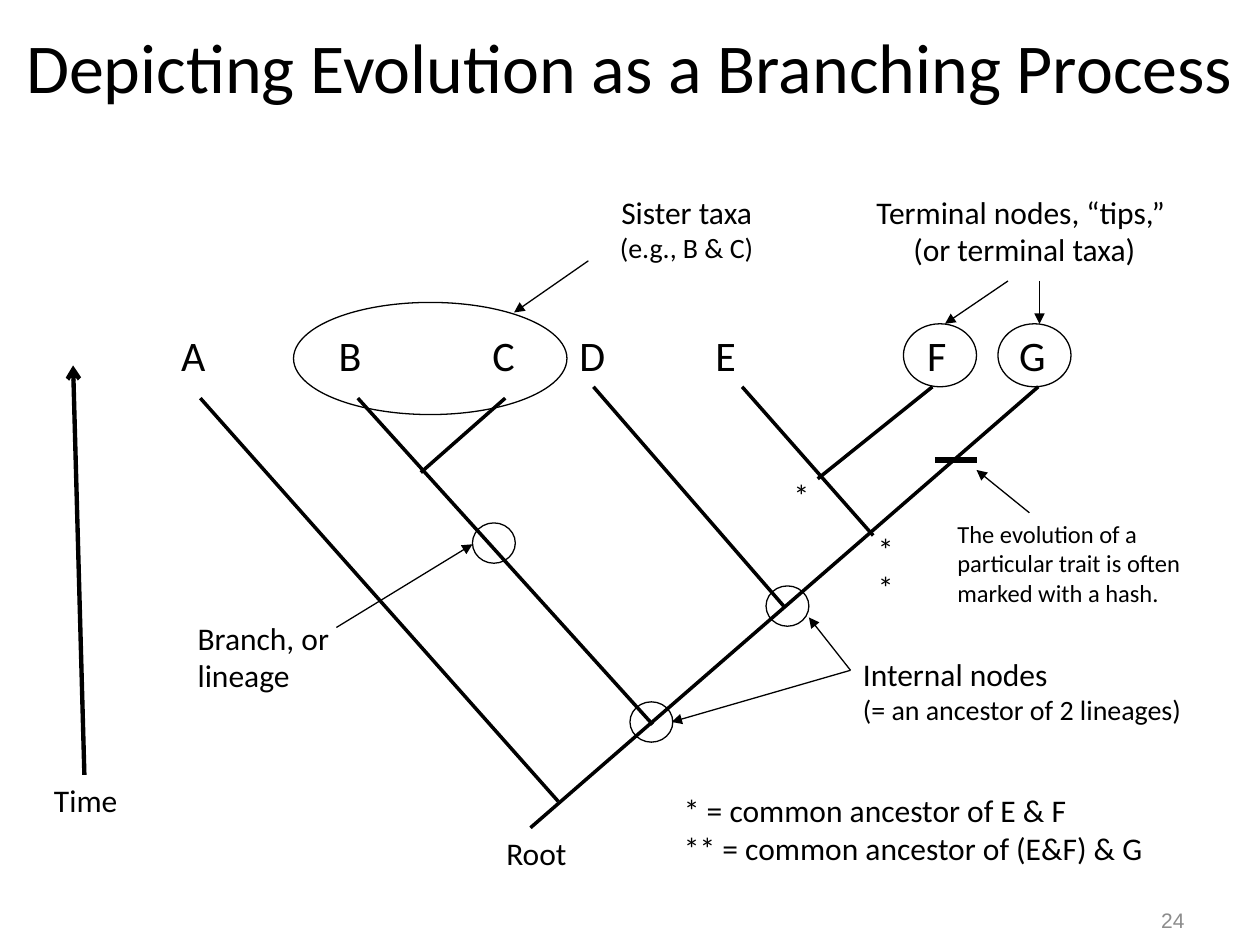
"""Builds a slide on depicting evolution as a branching process."""
from dataclasses import dataclass

from lxml import etree
from pptx import Presentation
from pptx import util as u
from pptx.dml.color import RGBColor
from pptx.enum import shapes, text
from pptx.oxml import ns

LEFT, CENTER, RIGHT = text.PP_ALIGN.LEFT, text.PP_ALIGN.CENTER, text.PP_ALIGN.RIGHT


@dataclass(frozen=True)
class Theme:
    """Colours, fonts, type sizes and line widths."""
    ink: str = "000000"
    muted: str = "8C8C8C"
    font: str = "Calibri"
    number_font: str = "Arial"
    title: int = 40
    taxon: int = 24
    label: int = 18
    detail: int = 16
    note: int = 14
    number: int = 12
    thin: float = 0.75
    branch: float = 2
    time: float = 2.5
    hash: float = 3.5


class Board:
    """Draws on one slide over a grid of 100 columns by 75 rows."""

    def __init__(self, prs, theme):
        """Adds a blank slide and derives the grid cell."""
        self.theme = theme
        self.s = prs.slides.add_slide(prs.slide_layouts[6])
        self.col, self.row = prs.slide_width / 100, prs.slide_height / 75

    def place(self, x, y, w, h):
        """Turns columns and rows into slide lengths."""
        return int(x * self.col), int(y * self.row), int(w * self.col), int(h * self.row)

    def ring(self, x, y, w, h):
        """Adds an unfilled ellipse."""
        sp = self.s.shapes.add_shape(shapes.MSO_SHAPE.OVAL, *self.place(x, y, w, h))
        sp.shadow.inherit = False
        sp.fill.background()
        sp.line.color.rgb = RGBColor.from_string(self.theme.ink)
        sp.line.width = u.Pt(self.theme.thin)

    def line(self, start, end, width, head=None):
        """Adds a straight line, with an arrowhead at its end if asked."""
        ends = self.place(*start, *end)
        sp = self.s.shapes.add_connector(shapes.MSO_CONNECTOR.STRAIGHT, *ends)
        sp.line.color.rgb = RGBColor.from_string(self.theme.ink)
        sp.line.width = u.Pt(width)
        if head:
            ln = sp._element.spPr.find(ns.qn("a:ln"))
            etree.SubElement(ln, ns.qn("a:tailEnd"), type=head)
        etree.SubElement(sp._element.spPr, ns.qn("a:effectLst"))

    def pointer(self, start, end):
        """Adds a thin arrow from a label to its target."""
        self.line(start, end, self.theme.thin, "triangle")

    def label(self, box, *lines, align=LEFT, wrap=False):
        """Adds a text box of (wording, size) lines that grows to fit."""
        sp = self.s.shapes.add_textbox(*self.place(*box))
        tf = sp.text_frame
        tf.word_wrap = wrap
        tf.auto_size = text.MSO_AUTO_SIZE.SHAPE_TO_FIT_TEXT
        tf.text = "\n".join(wording for wording, _ in lines)
        for p, (_, size) in zip(tf.paragraphs, lines):
            p.alignment = align
            font = p.runs[0].font
            font.name, font.size = self.theme.font, u.Pt(size)
            font.color.rgb = RGBColor.from_string(self.theme.ink)
        return tf

    def page_number(self, box, number):
        """Adds the muted page number."""
        tf = self.label(box, (number, self.theme.number), align=RIGHT, wrap=True)
        tf.auto_size = text.MSO_AUTO_SIZE.NONE
        tf.vertical_anchor = text.MSO_ANCHOR.MIDDLE
        font = tf.paragraphs[0].runs[0].font
        font.name = self.theme.number_font
        font.color.rgb = RGBColor.from_string(self.theme.muted)


def draw_tree(b):
    """Draws the taxa, branches and rings of the tree."""
    t = b.theme
    taxa = {"A": (13.4, 4.3), "B": (25.9, 4.3), "C": (38.1, 4.5), "D": (45, 4.5),
            "E": (55.8, 4.3), "F": (72.6, 4.1), "G": (79.9, 4.6)}
    branches = [((42.1, 65.7), (82.4, 30.7)), ((44.3, 63.6), (15.9, 31.6)),
                ((51.8, 57.5), (28.4, 31.6)), ((62.2, 48.1), (47.1, 30.7)),
                ((69.3, 42.5), (58.9, 30.7)), ((74, 30.7), (64.9, 38)),
                ((40.1, 31.6), (33.4, 37.5))]
    b.ring(23.3, 24, 21.7, 8.9)
    for x in (71.7, 79.2):
        b.ring(x, 25.7, 5.8, 5)
    for x, y in ((50, 55.7), (60.8, 46.5), (37.5, 41.5)):
        b.ring(x, y, 3.4, 3.2)
    for name, (x, w) in taxa.items():
        b.label((x, 25.7, w, 5), (name, t.taxon))
    for start, end in branches:
        b.line(start, end, t.branch)
    b.line((74.2, 36.5), (77.5, 36.5), t.hash)


def draw_labels(b):
    """Adds the wording around the tree and its pointers."""
    t = b.theme
    b.label((47.3, 14.8, 14.4, 6.7), ("Sister taxa", t.label),
            ("(e.g., B & C)", t.detail), align=CENTER)
    b.label((67.5, 14.8, 27.6, 7.1), ("Terminal nodes, “tips,” ", t.label),
            ("(or terminal taxa)", t.label), align=CENTER)
    b.label((67.5, 51.5, 30.8, 6.7), ("Internal nodes", t.label),
            ("(= an ancestor of 2 lineages)", t.detail), wrap=True)
    b.label((14.7, 48.6, 13.7, 7.1), ("Branch, or", t.label), ("lineage", t.label))
    b.label((75, 40.7, 21.7, 8.1),
            ("The evolution of a particular trait is often marked with a hash.", t.note),
            wrap=True)
    b.label((53.3, 62.3, 42.1, 7.1), ("* = common ancestor of E & F", t.label),
            ("** = common ancestor of (E&F) & G", t.label))
    b.label((62, 37.3, 3, 4), ("*", t.label))
    b.label((68.7, 41.6, 4, 4), ("**", t.label), wrap=True)
    b.label((39.2, 65.7, 7.3, 4), ("Root", t.label))
    b.label((3.3, 61.5, 7.1, 4), ("Time", t.label))
    b.line((6.7, 61.5), (5.8, 29), t.time, "arrow")
    for start, end in [((46.7, 20.7), (40.8, 24.8)), ((67.5, 53.2), (53.3, 57.3)),
                       ((67.5, 53.2), (64.2, 49)), ((26.7, 49.8), (37.5, 43.2)),
                       ((82.5, 22.3), (82.5, 25.7)), ((80, 22.3), (75, 25.7)),
                       ((81.7, 40.7), (77.5, 37.3))]:
        b.pointer(start, end)


def main():
    """Builds and saves the slide."""
    prs = Presentation()
    prs.slide_width, prs.slide_height = u.Inches(10), u.Inches(7.5)
    b = Board(prs, Theme())
    draw_tree(b)
    draw_labels(b)
    b.label((0.8, 1.4, 98.3, 7.7),
            ("Depicting Evolution as a Branching Process", b.theme.title),
            align=CENTER, wrap=True)
    b.page_number((71.7, 71, 23.3, 4), "24")
    prs.save("out.pptx")


if __name__ == "__main__":
    main()
